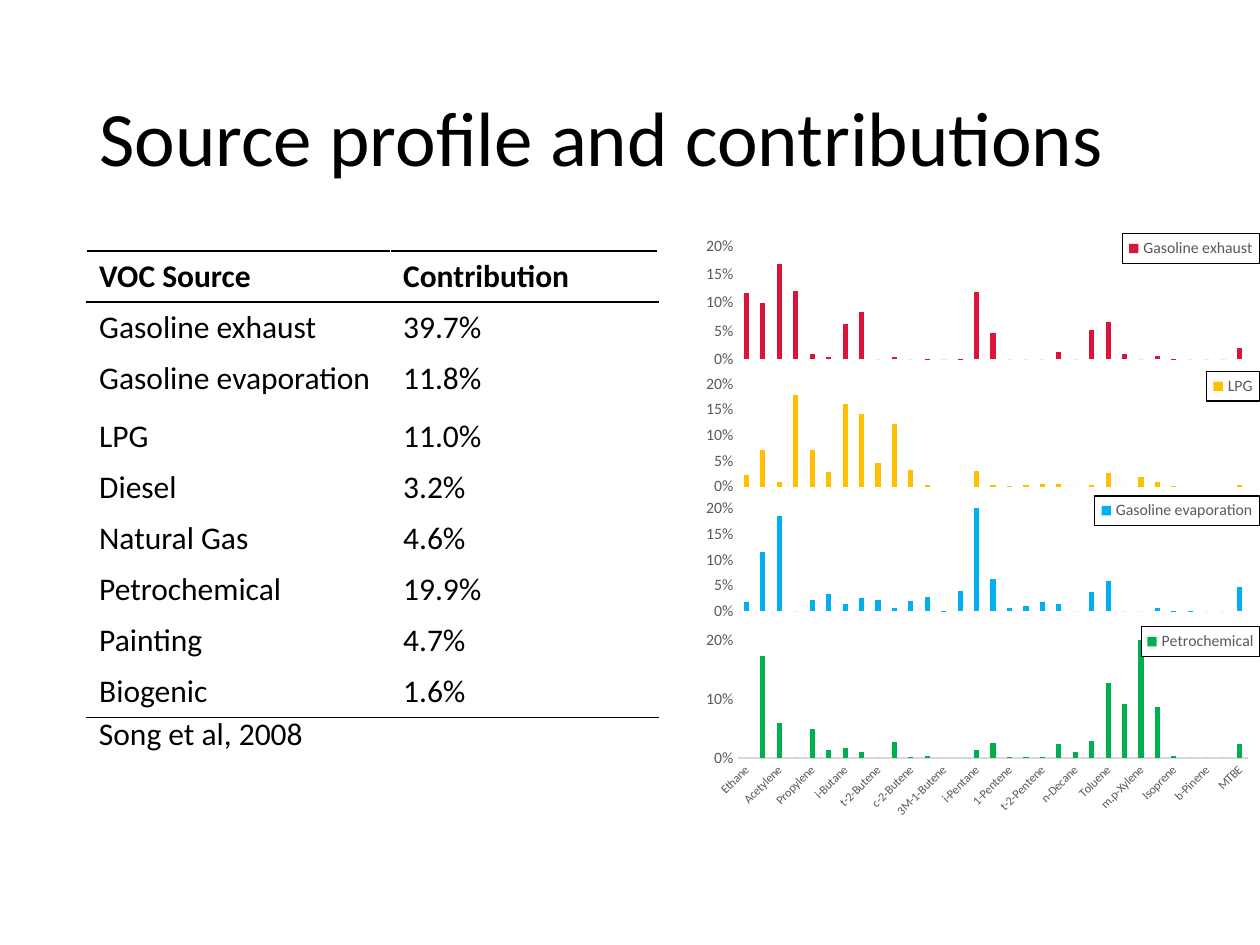
from dataclasses import dataclass

import pptx
import pptx.chart.data
import pptx.dml.color
import pptx.enum.chart
import pptx.enum.text
import pptx.oxml
import pptx.oxml.ns
import pptx.util
from pptx.util import Pt

RGBColor = pptx.dml.color.RGBColor
BLACK = RGBColor(0x00, 0x00, 0x00)
GRAY = RGBColor(0x59, 0x59, 0x59)
LIGHT_GRAY = RGBColor(0xD9, 0xD9, 0xD9)
CRIMSON = RGBColor(0xDC, 0x14, 0x3C)
AMBER = RGBColor(0xFF, 0xC0, 0x00)
BLUE = RGBColor(0x00, 0xB0, 0xF0)
GREEN = RGBColor(0x00, 0xB0, 0x50)
FONT = "Calibri"
LEFT = 49.5
CHART_LEFT, CHART_WIDTH = 396, 324
LEGEND_HEIGHT = 17

CONTRIBUTIONS = [
    ("VOC Source", "Contribution"),
    ("Gasoline exhaust", "39.7%"),
    ("Gasoline evaporation", "11.8%"),
    ("LPG", "11.0%"),
    ("Diesel", "3.2%"),
    ("Natural Gas", "4.6%"),
    ("Petrochemical", "19.9%"),
    ("Painting", "4.7%"),
    ("Biogenic", "1.6%"),
]
COMPOUNDS = [
    "Ethane", "Ethylene", "Acetylene", "Proplane", "Propylene", "2M-Propene",
    "i-Butane", "n-Butane", "t-2-Butene", "1-Butene", "c-2-Butene",
    "2M-1-Butene", "3M-1-Butene", "2M-2-Butene", "i-Pentane", "n-Pentane",
    "1-Pentene", "c-2-Pentene", "t-2-Pentene", "n-Hexane", "n-Decane",
    "Benzene", "Toluene", "Ethylbenzene", "m,p-Xylene", "o-Xylene",
    "Isoprene", "a-Pinene", "b-Pinene", "Limonene", "MTBE",
]
NUMBERS = [str(number) for number in range(1, len(COMPOUNDS) + 1)]


@dataclass
class Profile:
    name: str
    color: RGBColor
    top: float
    height: float
    plot_top: float  # fraction of the chart height
    plot_height: float
    legend_width: float
    values: list[float]
    major_unit: float = 0.05
    named_axis: bool = False


PROFILES = [
    Profile("Gasoline exhaust", CRIMSON, 133.2, 79.2, 0.09, 0.82, 78.3, [
        0.117, 0.099, 0.168, 0.12, 0.009, 0.003, 0.062, 0.084, 0, 0.004, 0,
        0.001, 0, 0.001, 0.119, 0.047, 0, 0, 0, 0.013, 0, 0.052, 0.066, 0.009,
        0, 0.005, 0.001, 0, 0, 0, 0.019]),
    Profile("LPG", AMBER, 211.9, 72, 0.1, 0.82, 30.2, [
        0.023, 0.071, 0.009, 0.179, 0.071, 0.029, 0.16, 0.142, 0.046, 0.122,
        0.033, 0.003, 0, 0, 0.031, 0.004, 0.002, 0.003, 0.006, 0.006, 0, 0.003,
        0.027, 0, 0.018, 0.009, 0.001, 0, 0, 0, 0.003]),
    Profile("Gasoline evaporation", BLUE, 283, 72, 0.1, 0.82, 94.2, [
        0.017, 0.116, 0.185, 0, 0.021, 0.033, 0.013, 0.025, 0.021, 0.005,
        0.019, 0.027, 0.001, 0.04, 0.218, 0.063, 0.005, 0.01, 0.017, 0.013, 0,
        0.038, 0.058, 0, 0, 0.007, 0.001, 0.001, 0, 0, 0.046]),
    Profile("Petrochemical", GREEN, 357.8, 112.3, 0.07, 0.6, 67.4, [
        0, 0.174, 0.06, 0, 0.049, 0.014, 0.016, 0.01, 0, 0.027, 0.002, 0.004,
        0, 0, 0.013, 0.026, 0.002, 0.001, 0.001, 0.024, 0.01, 0.028, 0.128,
        0.091, 0.209, 0.087, 0.003, 0, 0, 0, 0.024], 0.1, True),
]


def format_font(font, size: float, color: RGBColor, bold: bool = False) -> None:
    font.name, font.size, font.bold = FONT, Pt(size), bold
    font.color.rgb = color


def xml(text: str):
    namespaces = pptx.oxml.ns.nsdecls("a", "c")
    return pptx.oxml.parse_xml(text.replace(">", f" {namespaces}>", 1))


def layout_xml(x: float, y: float, width: float, height: float, inner: bool):
    """Manual chart layout, in fractions of the chart's size."""
    target = '<c:layoutTarget val="inner"/>' if inner else ""
    return xml(
        f'<c:layout><c:manualLayout>{target}<c:xMode val="edge"/>'
        f'<c:yMode val="edge"/><c:x val="{x:.3f}"/><c:y val="{y:.3f}"/>'
        f'<c:w val="{width:.3f}"/><c:h val="{height:.3f}"/>'
        '</c:manualLayout></c:layout>')


def add_cell_borders(cell, sides: list[str]) -> None:
    properties = cell._tc.get_or_add_tcPr()
    for position, side in enumerate(sides):
        properties.insert(position, xml(
            f'<a:{side} w="12700"><a:solidFill><a:srgbClr val="{BLACK}"/>'
            f'</a:solidFill></a:{side}>'))


def add_contribution_table(slide) -> None:
    row_count = len(CONTRIBUTIONS)
    table = slide.shapes.add_table(
        row_count, 2, Pt(LEFT), Pt(143.5), Pt(326.5), Pt(263.5)).table
    table.first_row = table.horz_banding = False
    table.columns[0].width, table.columns[1].width = Pt(173.7), Pt(152.8)
    for row_index, texts in enumerate(CONTRIBUTIONS):
        table.rows[row_index].height = Pt(33 if row_index == 2 else 28.1)
        for column_index, text in enumerate(texts):
            cell = table.cell(row_index, column_index)
            cell.text_frame.text = text
            format_font(cell.text_frame.paragraphs[0].runs[0].font, 18, BLACK,
                        row_index == 0)
            cell.fill.background()
            if row_index == 0:
                add_cell_borders(cell, ["lnT", "lnB"])
            elif row_index == 1:
                add_cell_borders(cell, ["lnT"])
            elif row_index == row_count - 1:
                add_cell_borders(cell, ["lnB"])


def format_legend(chart, profile: Profile) -> None:
    chart.has_legend = True
    legend = chart.legend
    legend.position = pptx.enum.chart.XL_LEGEND_POSITION.RIGHT
    legend.include_in_layout = True
    format_font(legend.font, 9, GRAY)
    width = profile.legend_width / CHART_WIDTH
    element = legend._element
    for old_layout in element.findall(pptx.oxml.ns.qn("c:layout")):
        element.remove(old_layout)
    element.insert(1, layout_xml(
        1 - width, 0, width, LEGEND_HEIGHT / profile.height, False))
    element.find(pptx.oxml.ns.qn("c:txPr")).addprevious(xml(
        '<c:spPr><a:solidFill><a:srgbClr val="FFFFFF"/></a:solidFill>'
        f'<a:ln w="9525"><a:solidFill><a:srgbClr val="{BLACK}"/>'
        '</a:solidFill></a:ln></c:spPr>'))


def format_axes(chart, profile: Profile) -> None:
    no_tick = pptx.enum.chart.XL_TICK_MARK.NONE
    for axis, size in ((chart.value_axis, 9), (chart.category_axis, 7)):
        axis.major_tick_mark = axis.minor_tick_mark = no_tick
        axis.has_major_gridlines = False
        format_font(axis.tick_labels.font, size, GRAY)
    value_axis, category_axis = chart.value_axis, chart.category_axis
    value_axis.minimum_scale, value_axis.maximum_scale = 0, 0.2
    value_axis.major_unit = profile.major_unit
    value_axis.format.line.fill.background()
    value_axis.tick_labels.number_format = "0%"
    value_axis.tick_labels.number_format_is_linked = False
    category_axis.visible = profile.named_axis
    category_axis.format.line.color.rgb = LIGHT_GRAY
    category_axis.format.line.width = Pt(0.75)
    body = category_axis._element.find(".//" + pptx.oxml.ns.qn("a:bodyPr"))
    body.set("rot", "-2700000")


def add_profile_chart(slide, profile: Profile) -> None:
    data = pptx.chart.data.CategoryChartData(number_format="0.0%")
    data.categories = COMPOUNDS if profile.named_axis else NUMBERS
    data.add_series(profile.name, profile.values)
    chart = slide.shapes.add_chart(
        pptx.enum.chart.XL_CHART_TYPE.COLUMN_CLUSTERED, Pt(CHART_LEFT),
        Pt(profile.top), Pt(CHART_WIDTH), Pt(profile.height), data).chart
    format_font(chart.font, 10, BLACK)
    chart.has_title = False
    plot = chart.plots[0]
    plot.vary_by_categories = False
    plot.gap_width, plot.overlap = 219, -27
    fill = plot.series[0].format.fill
    fill.solid()
    fill.fore_color.rgb = profile.color
    format_axes(chart, profile)
    format_legend(chart, profile)
    plot_area = chart._chartSpace.chart.plotArea
    for old_layout in plot_area.findall(pptx.oxml.ns.qn("c:layout")):
        plot_area.remove(old_layout)
    plot_area.insert(0, layout_xml(
        0.08, profile.plot_top, 0.9, profile.plot_height, True))


def add_title(slide) -> None:
    title = slide.shapes.title
    title.left, title.top, title.width, title.height = (
        Pt(LEFT), Pt(28.8), Pt(621), Pt(104.4))
    title.text_frame.text = "Source profile and contributions"
    title.text_frame.vertical_anchor = pptx.enum.text.MSO_ANCHOR.MIDDLE
    paragraph = title.text_frame.paragraphs[0]
    paragraph.alignment = pptx.enum.text.PP_ALIGN.LEFT
    paragraph.line_spacing = 0.9
    format_font(paragraph.runs[0].font, 44, BLACK)


def add_citation(slide) -> None:
    text_frame = slide.shapes.add_textbox(
        Pt(LEFT), Pt(404.6), Pt(132.5), Pt(29)).text_frame
    text_frame.word_wrap = False
    text_frame.auto_size = pptx.enum.text.MSO_AUTO_SIZE.SHAPE_TO_FIT_TEXT
    text_frame.text = "Song et al, 2008"
    format_font(text_frame.paragraphs[0].runs[0].font, 18, BLACK)


def main() -> None:
    presentation = pptx.Presentation()
    presentation.slide_width, presentation.slide_height = Pt(720), Pt(540)
    slide = presentation.slides.add_slide(presentation.slide_layouts[5])
    add_title(slide)
    add_contribution_table(slide)
    add_citation(slide)
    for profile in PROFILES:
        add_profile_chart(slide, profile)
    presentation.save("out.pptx")


if __name__ == "__main__":
    main()
